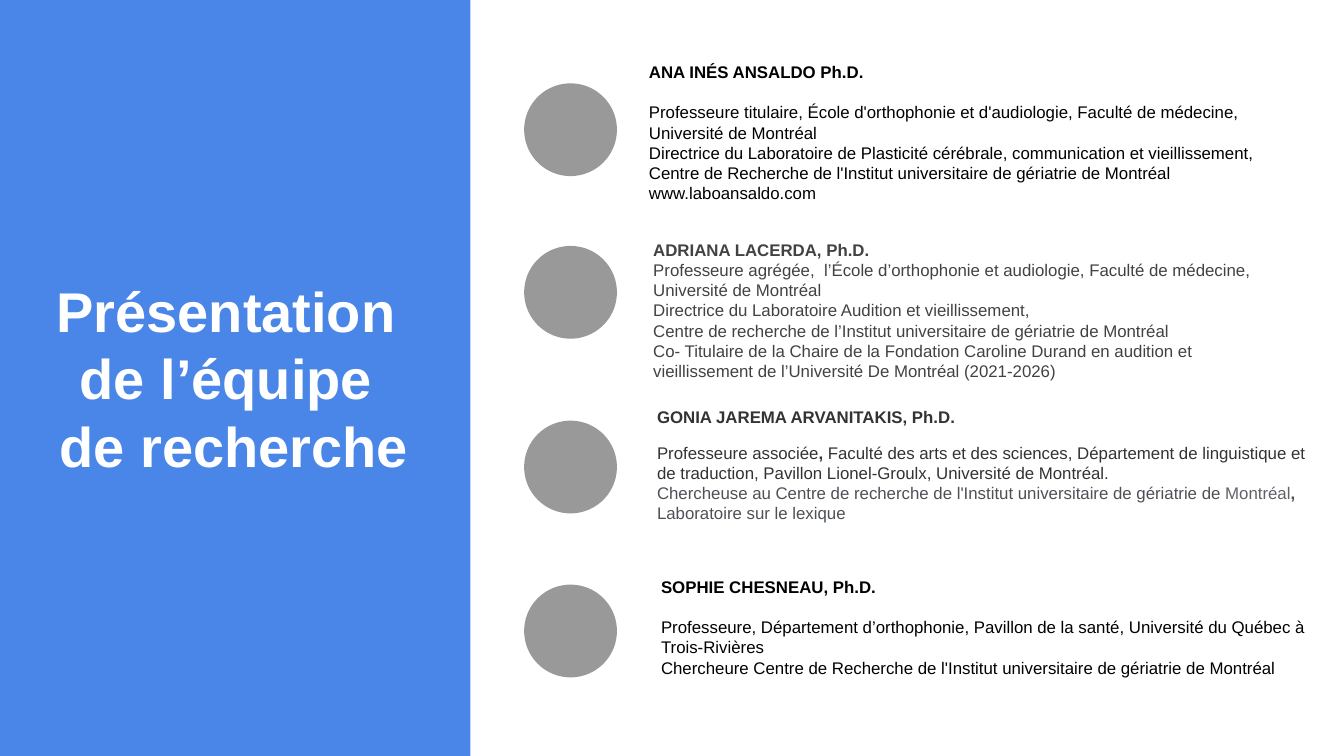
"""Build the slide that presents the research team."""
import pptx
import pptx.dml.color
import pptx.enum.shapes
import pptx.enum.text
import pptx.util

RGB = pptx.dml.color.RGBColor
BLUE = RGB(0x4A, 0x86, 0xE8)
WHITE = RGB(0xFF, 0xFF, 0xFF)
BLACK = RGB(0x00, 0x00, 0x00)
GREY = RGB(0x99, 0x99, 0x99)
CHARCOAL = RGB(0x42, 0x42, 0x42)
DARK = RGB(0x33, 0x33, 0x33)
SLATE = RGB(0x4D, 0x51, 0x56)
STEEL = RGB(0x5F, 0x63, 0x68)

WIDTH = 10
HEIGHT = WIDTH * 9 / 16
PANEL_SHARE = 0.35
PORTRAIT_LEFT, PORTRAIT_SIZE = 3.9, 0.69
TEXT_WIDTH = 5.09
MARGIN = 0.1

TITLE = "Présentation \nde l’équipe \nde recherche"

MEMBERS = [
    {"portrait": 0.62, "place": (4.73, 0.36, 1.26), "color": BLACK, "gap": 10.8,
     "name": "ANA INÉS ANSALDO Ph.D.",
     "lines": [
         "Professeure titulaire, École d'orthophonie et d'audiologie, "
         "Faculté de médecine, Université de Montréal",
         "Directrice du Laboratoire de Plasticité cérébrale, communication et "
         "vieillissement, Centre de Recherche de l'Institut universitaire de "
         "gériatrie de Montréal",
         "www.laboansaldo.com"]},
    {"portrait": 1.83, "place": (4.59, 1.66, 1.44), "color": CHARCOAL, "gap": 0,
     "name": "ADRIANA LACERDA, Ph.D.", "name_spacing": 1.15, "indent": 0.17,
     "lines": [
         "Professeure agrégée,  l’École d’orthophonie et audiologie, "
         "Faculté de médecine, Université de Montréal",
         "Directrice du Laboratoire Audition et vieillissement,",
         "Centre de recherche de l’Institut universitaire de gériatrie de Montréal",
         "Co- Titulaire de la Chaire de la Fondation Caroline Durand en audition et "
         "vieillissement de l’Université De Montréal (2021-2026)"]},
    {"portrait": 3.13, "place": (4.79, 2.93, 1.07), "color": DARK, "gap": 8,
     "name": "GONIA JAREMA ARVANITAKIS, Ph.D.",
     "lines": [
         [("Professeure associée", DARK, False), (", ", DARK, True),
          ("Faculté des arts et des sciences, Département de linguistique et de "
           "traduction, Pavillon Lionel-Groulx, Université de Montréal.", DARK, False)],
         [("Chercheuse au Centre de recherche de l'Institut universitaire de "
           "gériatrie de ", SLATE, False),
          ("Montréal", STEEL, False), (",", SLATE, True),
          (" Laboratoire sur le lexique", SLATE, False)]]},
    {"portrait": 4.35, "place": (4.82, 4.19, 1.11), "color": BLACK, "gap": 10.8,
     "name": "SOPHIE CHESNEAU, Ph.D.",
     "lines": [
         "Professeure, Département d’orthophonie, Pavillon de la santé, "
         "Université du Québec à Trois-Rivières",
         "Chercheure Centre de Recherche de l'Institut universitaire de "
         "gériatrie de Montréal"]},
]


def inches(*lengths):
    """Convert lengths in inches to slide units."""
    return [pptx.util.Inches(length) for length in lengths]


def add_plain_shape(page, kind, place, color):
    """Add a flat shape without outline or shadow."""
    shape = page.shapes.add_shape(kind, *inches(*place))
    shape.shadow.inherit = False
    shape.fill.solid()
    shape.fill.fore_color.rgb = color
    shape.line.fill.background()


def add_text_box(page, place, indent=0):
    """Add a wrapping text box, indented on the left, and return its frame."""
    frame = page.shapes.add_textbox(*inches(*place)).text_frame
    frame.word_wrap = True
    margin = pptx.util.Inches(MARGIN)
    frame.margin_left = pptx.util.Inches(MARGIN + indent)
    frame.margin_right = frame.margin_top = frame.margin_bottom = margin
    return frame


def style_span(span, size, color, bold):
    """Set the font of one run."""
    span.font.name = "Arial"
    span.font.size = pptx.util.Pt(size)
    span.font.color.rgb = color
    span.font.bold = bold


def add_title(page):
    """Add the centred title over the blue panel."""
    frame = add_text_box(page, (0, 1.83, 3.48, 1.96))
    frame.vertical_anchor = pptx.enum.text.MSO_ANCHOR.MIDDLE
    frame.text = TITLE
    for para in frame.paragraphs:
        para.alignment = pptx.enum.text.PP_ALIGN.CENTER
        style_span(para.runs[0], 30, WHITE, True)


def add_biography(page, member):
    """Add the name and the positions of one member."""
    left, top, height = member["place"]
    frame = add_text_box(page, (left, top, TEXT_WIDTH, height), member.get("indent", 0))
    color = member["color"]
    heading = frame.paragraphs[0]
    heading.text = member["name"]
    heading.line_spacing = member.get("name_spacing")
    style_span(heading.runs[0], 9, color, True)
    for index, line in enumerate(member["lines"]):
        para = frame.add_paragraph()
        if index == 0:
            para.space_before = pptx.util.Pt(member["gap"])
        spans = [(line, color, False)] if isinstance(line, str) else line
        for text, span_color, bold in spans:
            span = para.add_run()
            span.text = text
            style_span(span, 9, span_color, bold)


def main():
    """Build the deck and save it."""
    deck = pptx.Presentation()
    deck.slide_width, deck.slide_height = inches(WIDTH, HEIGHT)
    page = deck.slides.add_slide(deck.slide_layouts[6])
    page.background.fill.solid()
    page.background.fill.fore_color.rgb = BLUE
    kinds = pptx.enum.shapes.MSO_SHAPE
    panel = WIDTH * PANEL_SHARE
    add_plain_shape(page, kinds.RECTANGLE, (panel, 0, WIDTH - panel, HEIGHT), WHITE)
    add_title(page)
    for member in MEMBERS:
        place = (PORTRAIT_LEFT, member["portrait"], PORTRAIT_SIZE, PORTRAIT_SIZE)
        add_plain_shape(page, kinds.OVAL, place, GREY)
        add_biography(page, member)
    deck.save("out.pptx")


if __name__ == "__main__":
    main()
